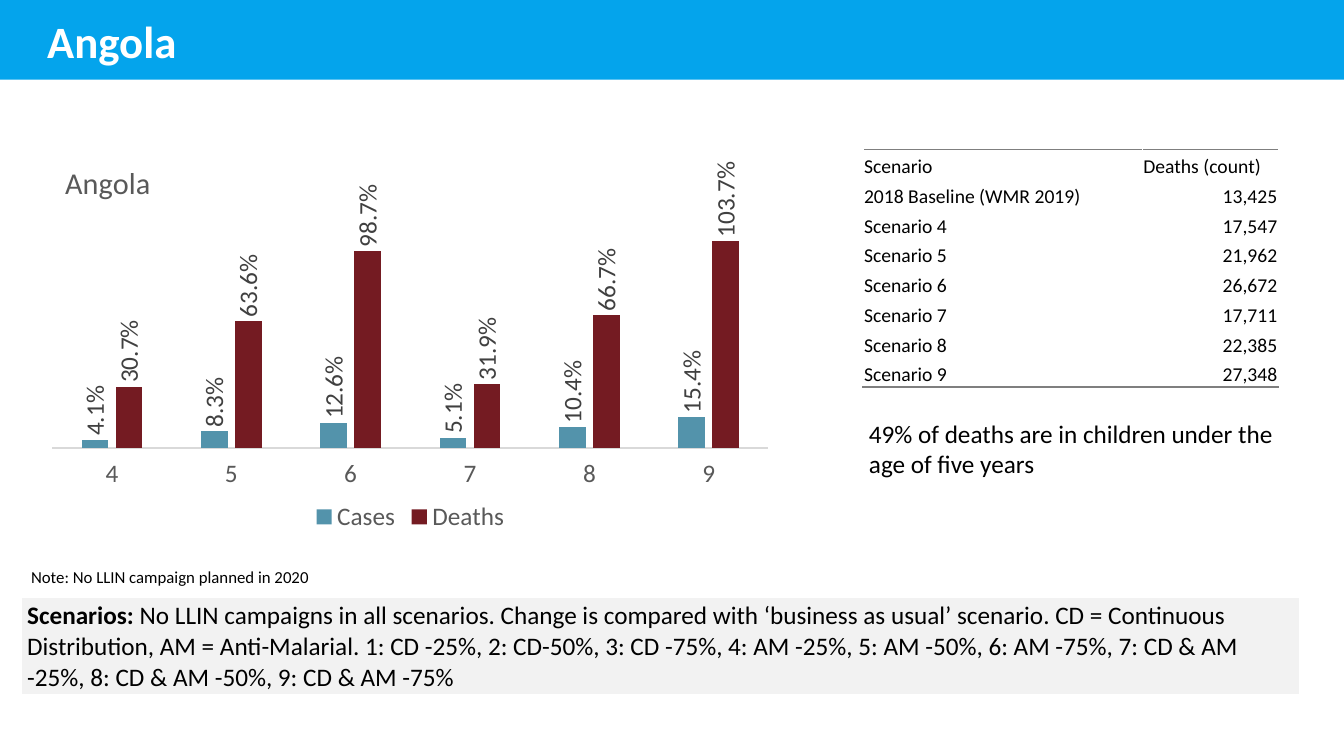
"""Build the Angola scenario slide with its chart and tables."""
from dataclasses import dataclass
from typing import Any

from lxml.etree import SubElement
from pptx import Presentation
from pptx.chart.data import CategoryChartData
from pptx.dml.color import RGBColor
from pptx.enum.chart import XL_CHART_TYPE as ChartType
from pptx.enum.chart import XL_LABEL_POSITION as LabelPosition
from pptx.enum.chart import XL_LEGEND_POSITION as LegendPosition
from pptx.enum.chart import XL_TICK_LABEL_POSITION as TickLabels
from pptx.enum.chart import XL_TICK_MARK as TickMark
from pptx.enum.shapes import MSO_SHAPE as Shape
from pptx.enum.text import MSO_ANCHOR as Anchor
from pptx.enum.text import PP_ALIGN as Align
from pptx.oxml import parse_xml
from pptx.oxml.ns import nsdecls, qn
from pptx.util import Emu, Pt

FONT = "Calibri"
WHITE = RGBColor(0xFF, 0xFF, 0xFF)
BLACK = RGBColor(0x00, 0x00, 0x00)
BANNER_BLUE = RGBColor(0x04, 0xA4, 0xEC)
PANEL_GREY = RGBColor(0xF2, 0xF2, 0xF2)
RULE_GREY = RGBColor(0x7F, 0x7F, 0x7F)
AXIS_GREY = RGBColor(0xD9, 0xD9, 0xD9)
CHART_GREY = RGBColor(0x59, 0x59, 0x59)
LABEL_GREY = RGBColor(0x40, 0x40, 0x40)
CASES_BLUE = RGBColor(0x53, 0x93, 0xAB)
DEATHS_RED = RGBColor(0x74, 0x1B, 0x22)


@dataclass(frozen=True)
class Box:
    """Position and size in px."""
    left: int
    top: int
    width: int
    height: int

    def emu(self) -> tuple[Emu, Emu, Emu, Emu]:
        """Return the four lengths in EMU."""
        return px(self.left), px(self.top), px(self.width), px(self.height)


@dataclass(frozen=True)
class Label:
    """A text box and its format."""
    box: Box
    text: str
    size: int
    color: RGBColor = BLACK
    bold: bool = False
    anchor: Anchor = Anchor.TOP


@dataclass(frozen=True)
class Measure:
    """A chart series."""
    name: str
    values: tuple[float, ...]
    color: RGBColor


LABELS = (
    Label(Box(37, 5, 1200, 70), "Angola", 32, WHITE, True, Anchor.MIDDLE),
    Label(Box(21, 557, 646, 30), "Note: No LLIN campaign planned in 2020", 12),
    Label(Box(852, 410, 457, 71),
          "49% of deaths are in children under the age of five years", 18),
)
CATEGORIES = ("4", "5", "6", "7", "8", "9")
MEASURES = (
    Measure("Cases", (0.041, 0.083, 0.126, 0.051, 0.104, 0.154), CASES_BLUE),
    Measure("Deaths", (0.307, 0.636, 0.987, 0.319, 0.667, 1.037), DEATHS_RED),
)
DEATH_ROWS = (
    ("Scenario", "Deaths (count)"),
    ("2018 Baseline (WMR 2019)", "13,425"),
    ("Scenario 4", "17,547"),
    ("Scenario 5", "21,962"),
    ("Scenario 6", "26,672"),
    ("Scenario 7", "17,711"),
    ("Scenario 8", "22,385"),
    ("Scenario 9", "27,348"),
)
SCENARIOS = (
    "No LLIN campaigns in all scenarios. Change is compared with ‘business as usual’ "
    "scenario. CD = Continuous Distribution, AM = Anti-Malarial. 1: CD -25%, 2: CD-50%, "
    "3: CD -75%, 4: AM -25%, 5: AM -50%, 6: AM -75%, 7: CD & AM -25%, "
    "8: CD & AM -50%, 9: CD & AM -75%"
)


def px(length: int) -> Emu:
    """Turn px, a hundred to the inch, into EMU."""
    return Emu(length * 9144)


def set_font(font: Any, size: float, color: RGBColor, bold: bool = False) -> None:
    """Format a font."""
    font.name, font.size, font.bold = FONT, Pt(size), bold
    font.color.rgb = color


def write(paragraph: Any, text: str, *, size: float, color: RGBColor = BLACK,
          bold: bool = False, align: Align = Align.LEFT) -> None:
    """Add a formatted run to a paragraph."""
    paragraph.alignment = align
    run = paragraph.add_run()
    run.text = text
    set_font(run.font, size, color, bold)


def add_label(slide: Any, label: Label) -> None:
    """Add a wrapped text box."""
    frame = slide.shapes.add_textbox(*label.box.emu()).text_frame
    frame.word_wrap = True
    frame.vertical_anchor = label.anchor
    write(frame.paragraphs[0], label.text, size=label.size, color=label.color, bold=label.bold)


def add_plain_table(slide: Any, rows: int, columns: int, box: Box) -> Any:
    """Add a table without header or banding."""
    table = slide.shapes.add_table(rows, columns, *box.emu()).table
    table.first_row = table.horz_banding = False
    return table


def set_margins(cell: Any, side: int, top: int, bottom: int) -> None:
    """Set the cell insets in px."""
    cell.margin_left = cell.margin_right = px(side)
    cell.margin_top, cell.margin_bottom = px(top), px(bottom)


def add_rule(cell: Any, edge: str) -> None:
    """Draw one border of a cell, ahead of its fill."""
    line = parse_xml(f'<a:{edge} {nsdecls("a")} w="12700"><a:solidFill>'
                     f'<a:srgbClr val="{RULE_GREY}"/></a:solidFill></a:{edge}>')
    cell._tc.get_or_add_tcPr().insert(0, line)


def add_deaths_table(slide: Any) -> None:
    """Add the table of death counts."""
    table = add_plain_table(slide, len(DEATH_ROWS), 2, Box(856, 148, 412, 236))
    table.columns[0].width, table.columns[1].width = px(277), px(135)
    last = len(DEATH_ROWS) - 1
    for row, texts in enumerate(DEATH_ROWS):
        for column, text in enumerate(texts):
            cell = table.cell(row, column)
            cell.fill.background()
            cell.vertical_anchor = Anchor.BOTTOM
            set_margins(cell, 1, 1, 0)
            align = Align.RIGHT if row and column else Align.LEFT
            write(cell.text_frame.paragraphs[0], text, size=14, align=align)
            if row in (0, last):
                add_rule(cell, "lnB" if row else "lnT")


def add_scenarios_panel(slide: Any) -> None:
    """Add the grey panel that explains the scenarios."""
    cell = add_plain_table(slide, 1, 1, Box(21, 593, 1268, 96)).cell(0, 0)
    cell.fill.solid()
    cell.fill.fore_color.rgb = PANEL_GREY
    set_margins(cell, 6, 3, 3)
    paragraph = cell.text_frame.paragraphs[0]
    write(paragraph, "Scenarios: ", size=18, bold=True)
    write(paragraph, SCENARIOS, size=18)


def set_layout(element: Any, **places: float) -> None:
    """Place a chart part by fractions of the chart."""
    for old in element.findall(qn("c:layout")):
        element.remove(old)
    layout = parse_xml(f'<c:layout {nsdecls("c")}><c:manualLayout/></c:layout>')
    inner = "w" in places
    settings = {"layoutTarget": "inner"} if inner else {}
    settings |= {"xMode": "edge", "yMode": "edge"} | places
    for name, value in settings.items():
        SubElement(layout[0], qn(f"c:{name}")).set("val", str(value))
    element.insert(0 if inner else 1, layout)


def add_change_chart(slide: Any) -> None:
    """Add the chart of changes in cases and deaths."""
    data = CategoryChartData(number_format="0.0%")
    data.categories = CATEGORIES
    for measure in MEASURES:
        data.add_series(measure.name, measure.values)
    box = Box(37, 131, 740, 402)
    chart = slide.shapes.add_chart(ChartType.COLUMN_CLUSTERED, *box.emu(), data).chart
    set_font(chart.font, 18, CHART_GREY)
    write(chart.chart_title.text_frame.paragraphs[0], "Angola", size=21.6, color=CHART_GREY)
    set_layout(chart.chart_title._element, x=0.03, y=0.06)
    set_layout(chart._chartSpace.chart.plotArea, x=0.02, y=0.19, w=0.96, h=0.59)
    chart.has_legend = True
    chart.legend.position, chart.legend.include_in_layout = LegendPosition.BOTTOM, False
    set_font(chart.legend.font, 18, CHART_GREY)
    values, categories = chart.value_axis, chart.category_axis
    values.minimum_scale, values.maximum_scale = 0, 1.2
    values.has_major_gridlines = values.visible = False
    categories.major_tick_mark = TickMark.NONE
    categories.tick_label_position = TickLabels.LOW
    categories.format.line.color.rgb, categories.format.line.width = AXIS_GREY, Pt(0.75)
    set_font(categories.tick_labels.font, 18, CHART_GREY)
    plot = chart.plots[0]
    plot.gap_width, plot.overlap, plot.vary_by_categories = 219, -27, False
    for series, measure in zip(plot.series, MEASURES):
        series.format.fill.solid()
        series.format.fill.fore_color.rgb = measure.color
        labels = series.data_labels
        labels.show_value, labels.position = True, LabelPosition.OUTSIDE_END
        labels.number_format, labels.number_format_is_linked = "0.0%", False
        set_font(labels.font, 18, LABEL_GREY)
        body = labels._element.find(qn("c:txPr")).find(qn("a:bodyPr"))
        body.set("rot", "-5400000")
        body.set("vert", "horz")


def main() -> None:
    """Build and save the slide."""
    presentation = Presentation()
    presentation.slide_width, presentation.slide_height = px(1333), px(750)
    slide = presentation.slides.add_slide(presentation.slide_layouts[6])
    banner = slide.shapes.add_shape(Shape.RECTANGLE, *Box(0, 0, 1333, 79).emu())
    banner.shadow.inherit = False
    banner.fill.solid()
    banner.fill.fore_color.rgb = BANNER_BLUE
    banner.line.fill.background()
    for label in LABELS:
        add_label(slide, label)
    add_scenarios_panel(slide)
    add_deaths_table(slide)
    add_change_chart(slide)
    presentation.save("out.pptx")


if __name__ == "__main__":
    main()
